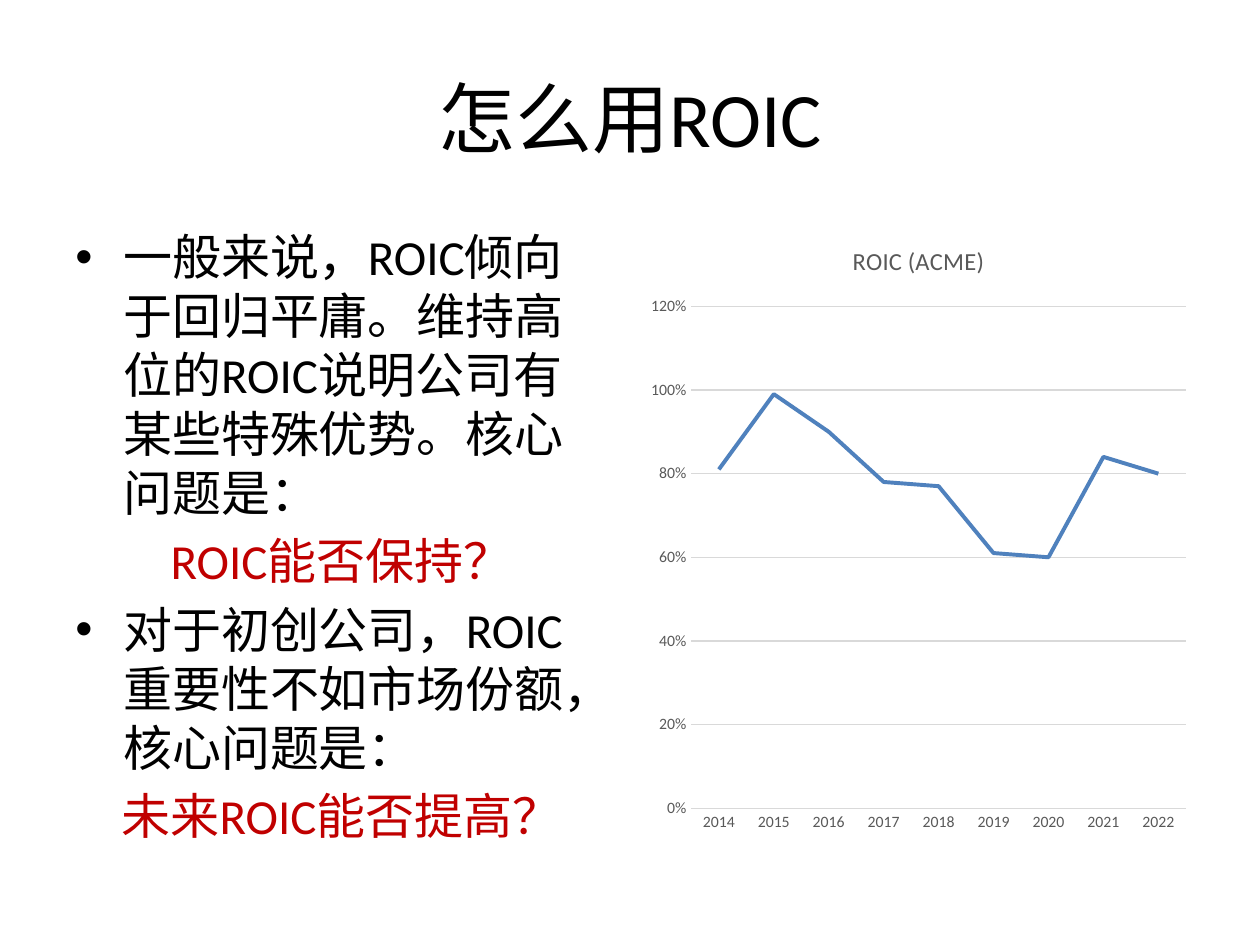
from dataclasses import dataclass

from lxml import etree
from pptx import Presentation
from pptx.chart.data import CategoryChartData
from pptx.dml.color import RGBColor
from pptx.enum.chart import XL_CHART_TYPE, XL_TICK_MARK
from pptx.enum.text import MSO_ANCHOR, PP_ALIGN
from pptx.oxml.ns import qn
from pptx.slide import Slide
from pptx.util import Inches, Pt

LINE_CHART = XL_CHART_TYPE.LINE
NO_TICKS = XL_TICK_MARK.NONE
CENTER, LEFT = PP_ALIGN.CENTER, PP_ALIGN.LEFT
TOP, MIDDLE = MSO_ANCHOR.TOP, MSO_ANCHOR.MIDDLE

WIDTH, HEIGHT = 10, 7.5
MARGIN = 0.5
GUTTER = 0.16
COLUMN = (WIDTH - 2 * MARGIN - GUTTER) / 2
BODY_TOP, BODY_HEIGHT = 1.75, 4.95

STATEMENTS = [
    ("一般来说，ROIC倾向于回归平庸。维持高位的ROIC说明公司有某些特殊优势。核心问题是：",
     "ROIC能否保持？"),
    ("对于初创公司，ROIC重要性不如市场份额，核心问题是：",
     "未来ROIC能否提高？"),
]
YEARS = [str(year) for year in range(2014, 2023)]
ROIC = [0.81, 0.99, 0.9, 0.78, 0.77, 0.61, 0.6, 0.84, 0.8]


def color(value):
    return RGBColor.from_string(value)


def box(column, top, height, span=1):
    """Left, top, width and height of an area in the two-column grid."""
    left = MARGIN + column * (COLUMN + GUTTER)
    width = span * COLUMN + (span - 1) * GUTTER
    return [Inches(length) for length in (left, top, width, height)]


@dataclass
class SlideBuilder:
    slide: Slide
    font: str = "Calibri"
    text: str = "000000"
    accent: str = "C00000"
    muted: str = "595959"
    grid: str = "D9D9D9"
    series: str = "4F81BD"

    def style(self, font, size, value):
        font.name, font.size, font.bold = self.font, Pt(size), False
        font.color.rgb = color(value)

    def text_box(self, area, anchor=TOP):
        frame = self.slide.shapes.add_textbox(*area).text_frame
        frame.word_wrap = True
        frame.vertical_anchor = anchor
        return frame

    def add_words(self, paragraph, words, size, value, align=LEFT):
        paragraph.alignment = align
        run = paragraph.add_run()
        run.text = words
        self.style(run.font, size, value)

    def title(self, words):
        frame = self.text_box(box(0, 0.3, 1.25, span=2), MIDDLE)
        self.add_words(frame.paragraphs[0], words, 44, self.text, CENTER)

    def add_bullet(self, paragraph):
        properties = paragraph._p.get_or_add_pPr()
        properties.set("marL", str(Inches(0.38)))
        properties.set("indent", str(Inches(-0.38)))
        etree.SubElement(properties, qn("a:buFont")).set("typeface", "Arial")
        etree.SubElement(properties, qn("a:buChar")).set("char", "•")

    def body(self, statements, size=28):
        """Bulleted statements, each followed by its centred key question."""
        frame = self.text_box(box(0, BODY_TOP, BODY_HEIGHT))
        for index, (statement, question) in enumerate(statements):
            paragraph = frame.add_paragraph() if index else frame.paragraphs[0]
            self.add_bullet(paragraph)
            if index:
                paragraph.space_before = Pt(size * 0.2)
            self.add_words(paragraph, statement, size, self.text)
            paragraph = frame.add_paragraph()
            paragraph.space_before = Pt(size * 0.2)
            self.add_words(paragraph, question, size, self.accent, CENTER)

    def style_line(self, line, value, width):
        line.color.rgb = color(value)
        line.width = Pt(width)

    def style_axis(self, axis):
        axis.major_tick_mark = axis.minor_tick_mark = NO_TICKS
        self.style(axis.tick_labels.font, 9, self.muted)

    def line_chart(self, heading, categories, values):
        data = CategoryChartData(number_format="0%")
        data.categories = categories
        data.add_series("Series 1", values)
        area = box(1, BODY_TOP, BODY_HEIGHT)
        chart = self.slide.shapes.add_chart(LINE_CHART, *area, data).chart
        self.style(chart.font, 10, self.text)
        chart.has_legend = False
        chart.has_title = True
        paragraph = chart.chart_title.text_frame.paragraphs[0]
        self.add_words(paragraph, heading, 14, self.muted, CENTER)
        chart.chart_title.include_in_layout = False

        self.style_axis(chart.category_axis)
        self.style_line(chart.category_axis.format.line, self.grid, 0.75)
        axis = chart.value_axis
        self.style_axis(axis)
        axis.minimum_scale, axis.maximum_scale, axis.major_unit = 0, 1.2, 0.2
        axis.tick_labels.number_format = "0%"
        axis.tick_labels.number_format_is_linked = False
        axis.format.line.fill.background()
        self.style_line(axis.major_gridlines.format.line, self.grid, 0.75)

        plot = chart.plots[0]
        plot.vary_by_categories = False
        plot.series[0].smooth = False
        self.style_line(plot.series[0].format.line, self.series, 2.25)


def main():
    presentation = Presentation()
    presentation.slide_width, presentation.slide_height = Inches(WIDTH), Inches(HEIGHT)
    builder = SlideBuilder(presentation.slides.add_slide(presentation.slide_layouts[6]))
    builder.title("怎么用ROIC")
    builder.body(STATEMENTS)
    builder.line_chart("ROIC (ACME)", YEARS, ROIC)
    presentation.save("out.pptx")


if __name__ == "__main__":
    main()
